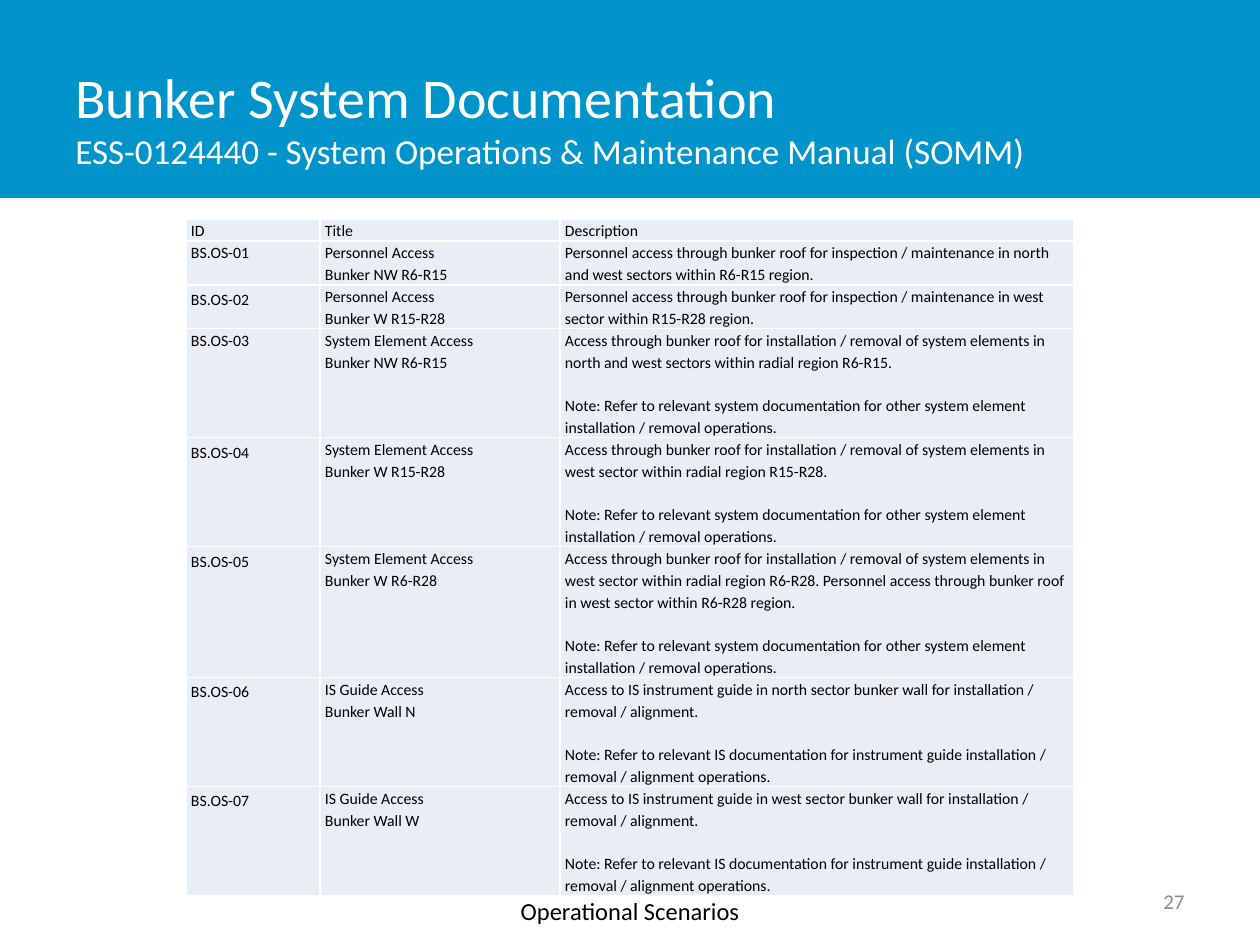
from copy import deepcopy

from lxml import etree
from pptx import Presentation
from pptx.dml.color import RGBColor
from pptx.enum.shapes import MSO_SHAPE
from pptx.enum.text import MSO_ANCHOR, PP_ALIGN
from pptx.oxml.ns import qn
from pptx.util import Emu, Pt

RECT = MSO_SHAPE.RECTANGLE
TOP, MIDDLE = MSO_ANCHOR.TOP, MSO_ANCHOR.MIDDLE
LEFT, CENTER, RIGHT = PP_ALIGN.LEFT, PP_ALIGN.CENTER, PP_ALIGN.RIGHT

SCALE = 914400 / 126
FONT = "Calibri"
COLORS = {"band": "0094CA", "white": "FFFFFF", "cell": "E9EDF4",
          "black": "000000", "grey": "8C8C8C"}

COLS = [134, 240, 514]
ROWS = [21, 44, 44, 109, 109, 131, 109, 109]

NOTE = ("Note: Refer to relevant system documentation for other system element "
        "installation / removal operations.")
GUIDE = ("Note: Refer to relevant IS documentation for instrument guide "
         "installation / removal / alignment operations.")
PERSON = "Personnel access through bunker roof for inspection / maintenance in "
ACCESS = "Access through bunker roof for installation / removal of system elements in "
WALL = ("Access to IS instrument guide in {} sector bunker wall for "
        "installation / removal / alignment.")

# Title lines, then description paragraphs
SCENES = [
    (["Personnel Access", "Bunker NW R6-R15"],
     [PERSON + "north and west sectors within R6-R15 region."]),
    (["Personnel Access", "Bunker W R15-R28"],
     [PERSON + "west sector within R15-R28 region."]),
    (["System Element Access", "Bunker NW R6-R15"],
     [ACCESS + "north and west sectors within radial region R6-R15.", NOTE]),
    (["System Element Access", "Bunker W R15-R28"],
     [ACCESS + "west sector within radial region R15-R28.", NOTE]),
    (["System Element Access", "Bunker W R6-R28"],
     [ACCESS + "west sector within radial region R6-R28. Personnel access "
      "through bunker roof in west sector within R6-R28 region.", NOTE]),
    (["IS Guide Access", "Bunker Wall N"], [WALL.format("north"), GUIDE]),
    (["IS Guide Access", "Bunker Wall W"], [WALL.format("west"), GUIDE]),
]
TIGHT = {"BS.OS-01", "BS.OS-03", "ID"}  # IDs with proportional line spacing


def px(n):
    return Emu(round(n * SCALE))


def rgb(name):
    return RGBColor.from_string(COLORS[name])


def put(obj, **form):
    for key, value in form.items():
        setattr(obj, key, value)


def write(para, lines, color, **form):
    """Fill a paragraph with (text, size) lines parted by line breaks."""
    put(para, **form)
    for i, (text, size) in enumerate(lines):
        if i:
            para.add_line_break()
            para._p.findall(qn("a:br"))[-1].append(deepcopy(run._r.rPr))
        run = para.add_run()
        run.text = text
        put(run.font, name=FONT, size=Pt(size))
        run.font.color.rgb = rgb(color)


def label(slide, box, lines, color, anchor=TOP, align=LEFT):
    frame = slide.shapes.add_textbox(*map(px, box)).text_frame
    put(frame, word_wrap=True, vertical_anchor=anchor)
    write(frame.paragraphs[0], lines, color, alignment=align)


def header(slide, box):
    x, y, w, h = box
    band = slide.shapes.add_shape(RECT, *map(px, box))
    band.shadow.inherit = False
    band.fill.solid()
    band.fill.fore_color.rgb = rgb("band")
    band.line.fill.background()
    label(slide, (x + 63, y + 38, w - 276, h - 40),
          [("Bunker System Documentation", 32),
           ("ESS-0124440 - System Operations & Maintenance Manual (SOMM)", 20)],
          "white", MIDDLE)


def border(cell):
    props = cell._tc.get_or_add_tcPr()
    for side in ("lnL", "lnR", "lnT", "lnB"):
        line = etree.SubElement(props, qn("a:" + side), w=str(Pt(1)))
        fill = etree.SubElement(line, qn("a:solidFill"))
        etree.SubElement(fill, qn("a:srgbClr"), val=COLORS["white"])


def fill_cell(cell, paras, space):
    """Each paragraph is a list of lines."""
    put(cell, margin_left=px(5), margin_right=px(5),
        margin_top=0, margin_bottom=0, vertical_anchor=TOP)
    border(cell)
    cell.fill.solid()
    cell.fill.fore_color.rgb = rgb("cell")
    frame = cell.text_frame
    for i, lines in enumerate(paras):
        para = frame.add_paragraph() if i else frame.paragraphs[0]
        write(para, [(text, 9) for text in lines], "black",
              line_spacing=space, space_before=Pt(12 if i else 0))


def scenarios(slide, box):
    table = slide.shapes.add_table(len(ROWS), len(COLS), *map(px, box)).table
    put(table, first_row=False, horz_banding=False)
    for col, width in zip(table.columns, COLS):
        col.width = px(width)
    for row, height in zip(table.rows, ROWS):
        row.height = px(height)
    data = [("ID", ["Title"], ["Description"])]
    data += [(f"BS.OS-{n:02}", *scene) for n, scene in enumerate(SCENES, 1)]
    for r, (code, title, about) in enumerate(data):
        fill_cell(table.cell(r, 0), [[code]], 1.15 if code in TIGHT else Pt(14))
        fill_cell(table.cell(r, 1), [title], 1.15)
        fill_cell(table.cell(r, 2), [[text] for text in about], 1.15)


def footer(slide, box):
    x, y, w, h = box
    label(slide, (x + w - 357, y, 294, 50), [("27", 12)], "grey", MIDDLE, RIGHT)
    label(slide, (x + 496, y + 14, 268, 43),
          [("Operational Scenarios", 14)], "black", align=CENTER)


def main():
    deck = Presentation()
    put(deck, slide_width=px(1260), slide_height=px(945))
    slide = deck.slides.add_slide(deck.slide_layouts[6])
    header(slide, (0, 0, 1260, 198))
    scenarios(slide, (186, 219, sum(COLS), sum(ROWS)))
    footer(slide, (0, 876, 1260, 69))
    deck.save("out.pptx")


if __name__ == "__main__":
    main()
